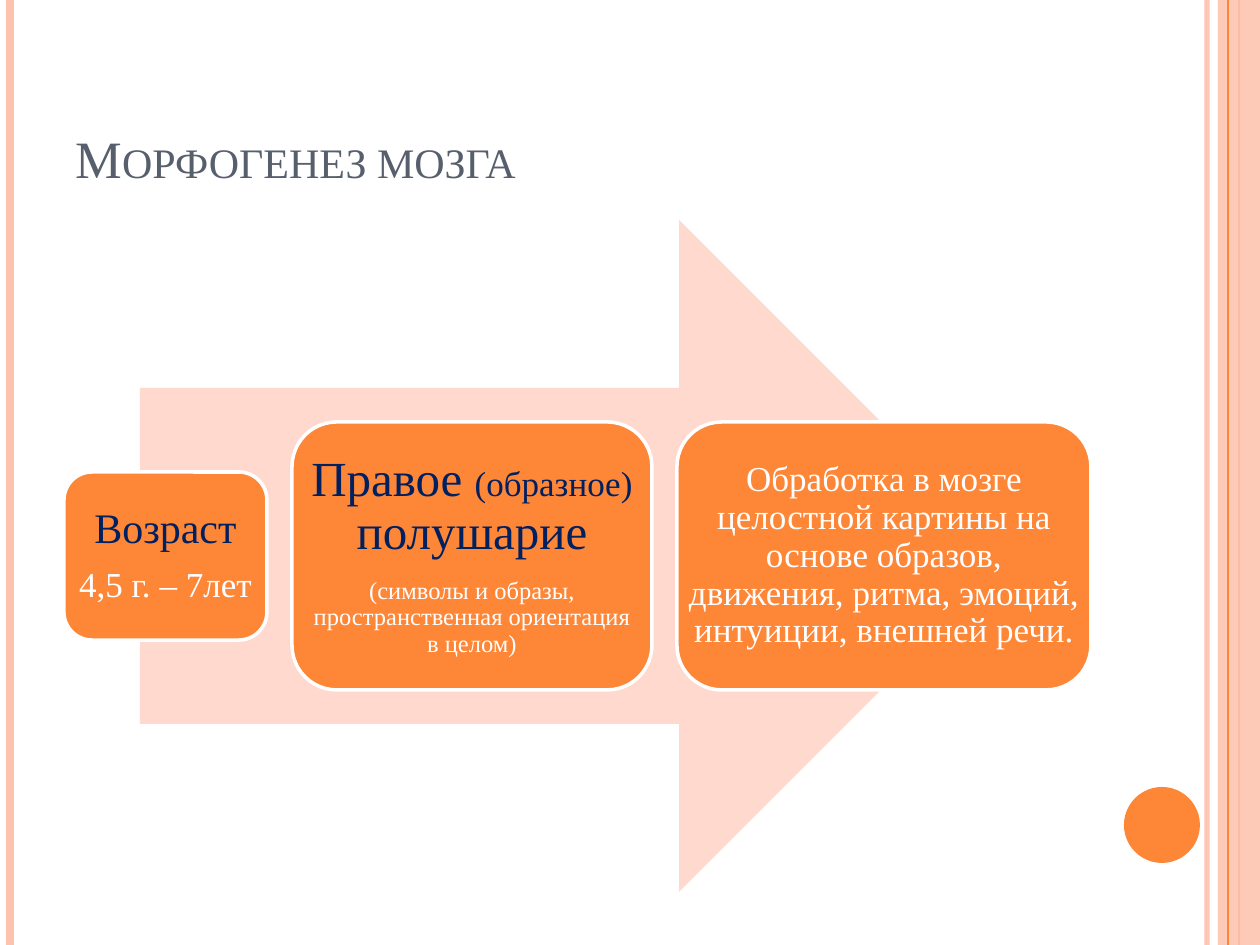
from pptx import Presentation
from pptx.dml.color import RGBColor
from pptx.enum.shapes import MSO_CONNECTOR, MSO_SHAPE
from pptx.enum.text import MSO_ANCHOR, PP_ALIGN
from pptx.oxml.ns import qn
from pptx.util import Inches, Pt
from lxml import etree

STRAIGHT = MSO_CONNECTOR.STRAIGHT
RECT, OVAL = MSO_SHAPE.RECTANGLE, MSO_SHAPE.OVAL
ARROW, ROUNDED = MSO_SHAPE.RIGHT_ARROW, MSO_SHAPE.ROUNDED_RECTANGLE
MIDDLE, BOTTOM = MSO_ANCHOR.MIDDLE, MSO_ANCHOR.BOTTOM
CENTER = PP_ALIGN.CENTER

PX = Inches(1) // 126
HEIGHT = 945
FONT = "Times New Roman"
ORANGE, PINK, PALE = "FE8637", "FEC3AE", "FFD9CE"
NAVY, SLATE, WHITE = "002060", "575F6D", "FFFFFF"
LINE_SPACING = 0.9
SPACE_AFTER = 0.35  # share of the paragraph's first text size


def paint(fill, color, opacity=100):
    """Give the fill of a shape, line or font a solid colour; opacity in percent."""
    fill.solid()
    fill.fore_color.rgb = RGBColor.from_string(color)
    if opacity < 100:
        color_element = fill._xPr.find(".//" + qn("a:srgbClr"))
        etree.SubElement(color_element, qn("a:alpha"), val=str(opacity * 1000))


def add_stripe(x, color, points, opacity=100):
    """Draw a vertical line over the full height of the page."""
    stripe = shapes.add_connector(STRAIGHT, x * PX, 0, x * PX, HEIGHT * PX)
    stripe.line.width = Pt(points)
    paint(stripe.line.fill, color, opacity)
    etree.SubElement(stripe._element.spPr, qn("a:effectLst"))


deck = Presentation()
deck.slide_width, deck.slide_height = Inches(10), Inches(7.5)
page = deck.slides.add_slide(deck.slide_layouts[6])
shapes = page.shapes

# Stripes behind the right-hand band
add_stripe(1207, PINK, 3, opacity=93)
add_stripe(10, PINK, 4.5)
add_stripe(1239, ORANGE, 1.5)

# Shapes without text: right-hand band, corner dot, large arrow
solids = [
    (RECT, 1218, 0, 42, HEIGHT, PINK, 87),
    (OVAL, 1124, 787, 76, 76, ORANGE, 100),
    (ARROW, 140, 220, 875, 672, PALE, 100),
]
for kind, left, top, width, height, color, opacity in solids:
    solid = shapes.add_shape(kind, left * PX, top * PX, width * PX, height * PX)
    solid.shadow.inherit = False
    solid.line.fill.background()
    paint(solid.fill, color, opacity)

# Stripe in front of the band
add_stripe(1228, ORANGE, 0.75)

# Title
title = shapes.add_textbox(63 * PX, 38 * PX, 1029 * PX, 157 * PX)
title_frame = title.text_frame
title_frame.word_wrap = True
title_frame.vertical_anchor = BOTTOM
title_frame.text = "Морфогенез мозга"
title_font = title_frame.paragraphs[0].runs[0].font
title_font.name, title_font.size = FONT, Pt(30)
paint(title_font.fill, SLATE)
title_font._element.set("cap", "small")

# Steps, all centred on the arrow's axis: left, width, height, inset, paragraphs.
# The inset adds to the margin that the rounded corners already give.
AXIS = 556
steps = [
    (64, 203, 168, 4, [
        [("Возраст", 24, NAVY)],
        [("4,5 г. – 7лет", 20, WHITE)],
    ]),
    (292, 360, 268, 2, [
        [("Правое ", 28, NAVY), ("(образное) ", 20, NAVY), ("полушарие", 28, NAVY)],
        [("(символы и образы, пространственная ориентация в целом)", 14, WHITE)],
    ]),
    (677, 414, 268, -3, [
        [("Обработка в мозге целостной картины на основе образов, движения, "
          "ритма, эмоций, интуиции, внешней речи.", 20, WHITE)],
    ]),
]
for left, width, height, inset, paragraphs in steps:
    top = AXIS - height // 2
    box = shapes.add_shape(ROUNDED, left * PX, top * PX, width * PX, height * PX)
    box.shadow.inherit = False
    paint(box.fill, ORANGE)
    paint(box.line.fill, WHITE)
    box.line.width = Pt(2)

    frame = box.text_frame
    frame.word_wrap = True
    frame.vertical_anchor = MIDDLE
    frame.margin_left = frame.margin_right = inset * PX
    frame.margin_top = frame.margin_bottom = inset * PX
    for number, spans in enumerate(paragraphs):
        para = frame.add_paragraph() if number else frame.paragraphs[0]
        first_size = spans[0][1]
        para.alignment = CENTER
        para.line_spacing = LINE_SPACING
        para.space_after = Pt(round(first_size * SPACE_AFTER))
        for text, size, color in spans:
            span = para.add_run()
            span.text = text
            span.font.name, span.font.size = FONT, Pt(size)
            paint(span.font.fill, color)

deck.save("out.pptx")
